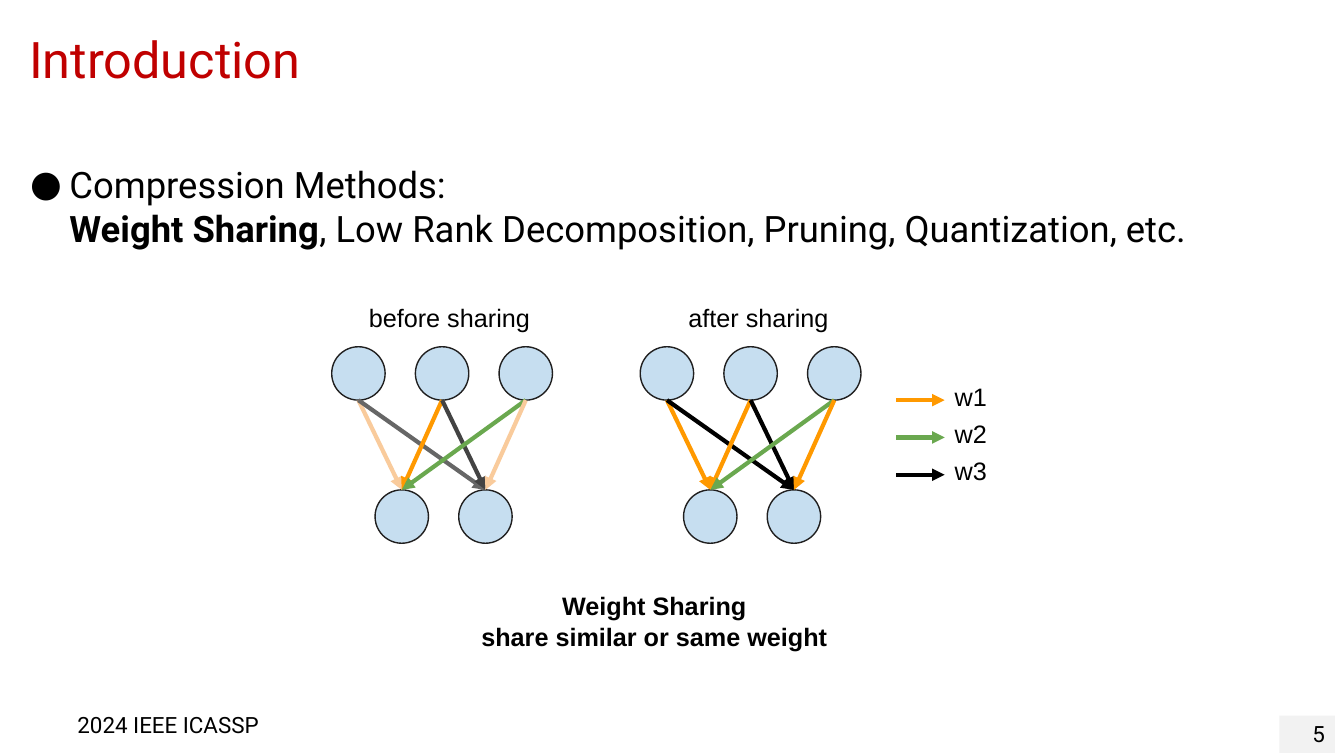
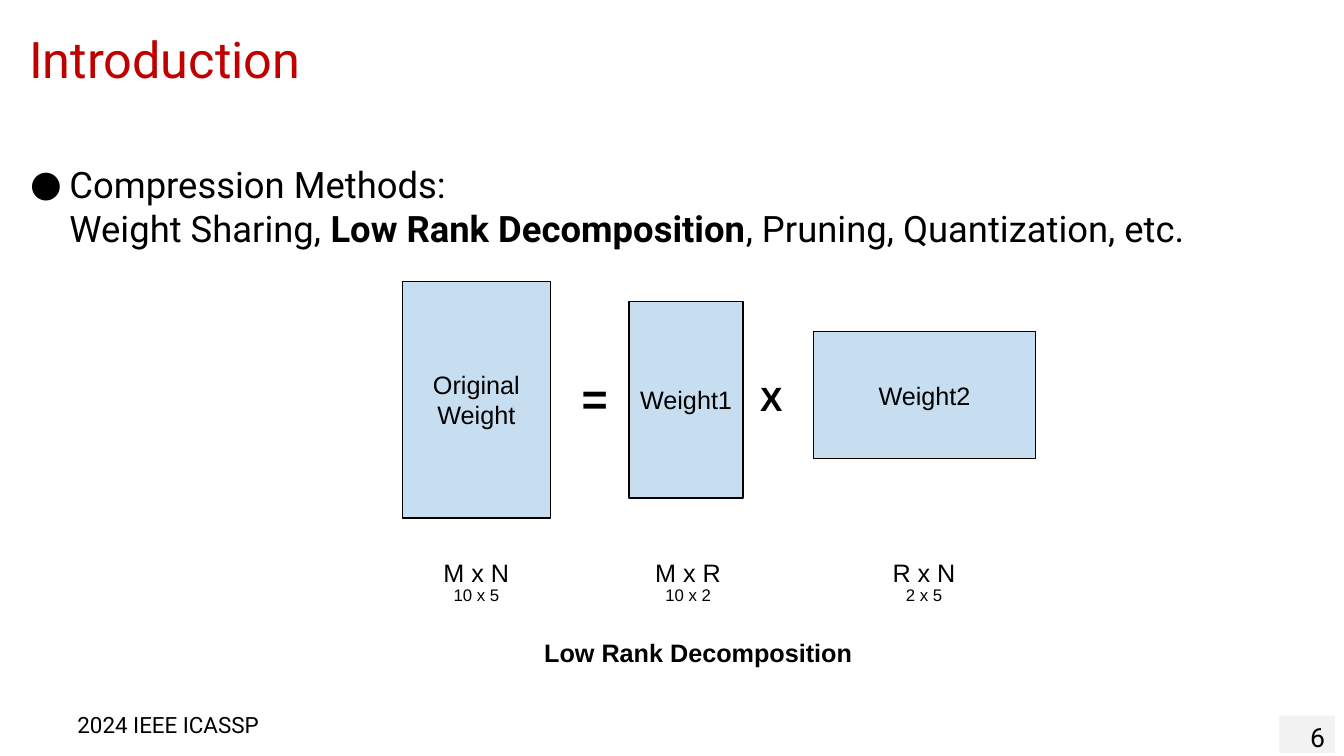
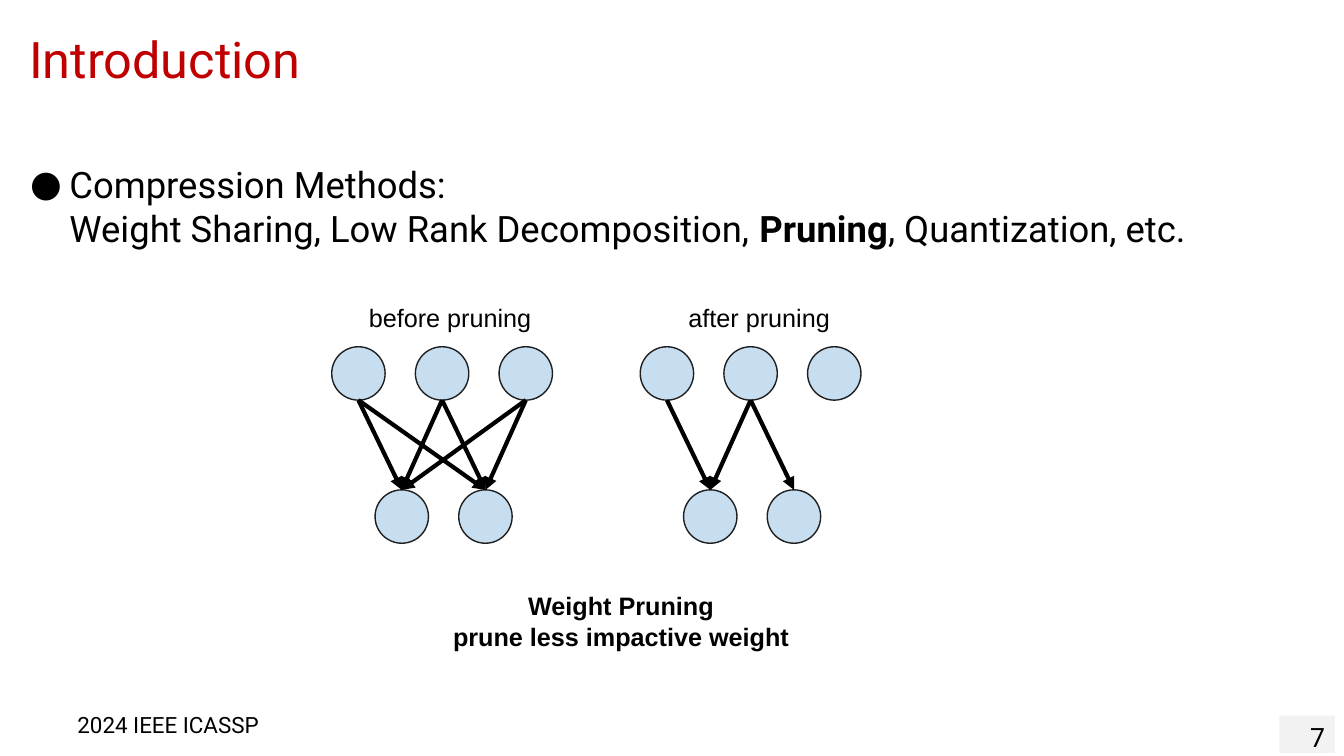
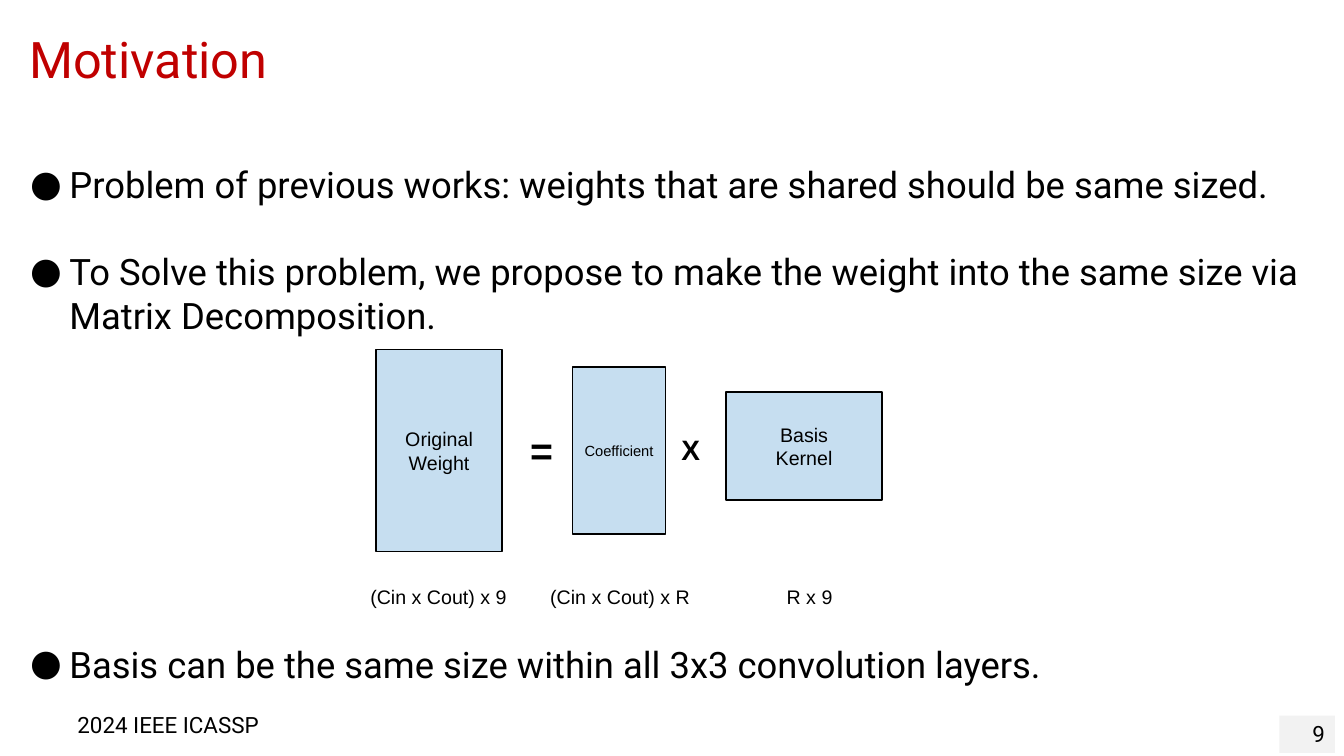
import dataclasses
import typing

import lxml.etree
import pptx
import pptx.dml.color
import pptx.enum.shapes
import pptx.enum.text
import pptx.oxml.ns
import pptx.util

Inches = pptx.util.Inches
Pt = pptx.util.Pt
Align = pptx.enum.text.PP_ALIGN
Anchor = pptx.enum.text.MSO_ANCHOR
Kind = pptx.enum.shapes.MSO_SHAPE


@dataclasses.dataclass(frozen=True)
class Theme:
    black: str = "000000"
    white: str = "FFFFFF"
    red: str = "C00000"
    blue: str = "C6DEF0"
    rim: str = "201F1F"
    band: str = "F2F2F2"
    orange: str = "FF9900"
    peach: str = "F9CB9C"
    green: str = "6AA84F"
    gray: str = "666666"
    dark: str = "434343"
    head: str = "Roboto"
    plain: str = "Arial"
    title: float = 36
    body: float = 26
    label: float = 18
    foot: float = 16
    page: float = 19
    small: float = 14
    tiny: float = 12


THEME = Theme()


@dataclasses.dataclass(frozen=True)
class Label:
    text: str
    left: float
    top: float
    width: float
    height: float = 0.4
    size: float = THEME.label
    bold: bool = False
    align: typing.Any = Align.CENTER
    font: str = THEME.plain


@dataclasses.dataclass(frozen=True)
class Edge:
    start: int
    end: int
    color: str = THEME.black


@dataclasses.dataclass(frozen=True)
class Bullet:
    lines: tuple[str, ...]
    strong: str = ""
    gap: float = 0


def tint(code: str) -> pptx.dml.color.RGBColor:
    return pptx.dml.color.RGBColor.from_string(code)


def assign(target: typing.Any, values: dict[str, typing.Any]) -> None:
    for name, value in values.items():
        setattr(target, name, value)


def style(run: typing.Any, size: float, font: str, bold: bool = False,
          color: str = THEME.black) -> None:
    assign(run.font, {"size": Pt(size), "name": font, "bold": bold})
    run.font.color.rgb = tint(color)


def write(shape: typing.Any, label: Label, anchor: typing.Any = Anchor.TOP) -> None:
    frame = shape.text_frame
    assign(frame, {"text": label.text, "word_wrap": True, "vertical_anchor": anchor})
    for line in frame.paragraphs:
        line.alignment = label.align
        for run in line.runs:
            style(run, label.size, label.font, label.bold)


def add_label(slide: typing.Any, label: Label) -> None:
    box = slide.shapes.add_textbox(Inches(label.left), Inches(label.top),
                                   Inches(label.width), Inches(label.height))
    write(box, label)


def add_form(slide: typing.Any, kind: typing.Any, left: float, top: float, width: float,
             height: float, fill: str, rim: str = "") -> typing.Any:
    form = slide.shapes.add_shape(kind, Inches(left), Inches(top),
                                  Inches(width), Inches(height))
    form.shadow.inherit = False
    form.fill.solid()
    form.fill.fore_color.rgb = tint(fill)
    if rim:
        form.line.color.rgb = tint(rim)
        form.line.width = Pt(1)
    else:
        form.line.fill.background()
    return form


def add_block(slide: typing.Any, label: Label) -> None:
    form = add_form(slide, Kind.RECTANGLE, label.left, label.top, label.width,
                    label.height, THEME.blue, THEME.black)
    write(form, label, Anchor.MIDDLE)


def add_arrow(slide: typing.Any, left: float, top: float, right: float, low: float,
              color: str, goal: typing.Any = None) -> None:
    arrow = slide.shapes.add_connector(
        pptx.enum.shapes.MSO_CONNECTOR.STRAIGHT,
        Inches(left), Inches(top), Inches(right), Inches(low))
    if goal is not None:
        arrow.end_connect(goal, 0)
    arrow.line.color.rgb = tint(color)
    arrow.line.width = Pt(3)
    tail = lxml.etree.SubElement(arrow.line._get_or_add_ln(),
                                 pptx.oxml.ns.qn("a:tailEnd"))
    tail.set("type", "triangle")
    lxml.etree.SubElement(arrow._element.spPr, pptx.oxml.ns.qn("a:effectLst"))


def add_net(slide: typing.Any, left: float, name: str, edges: tuple[Edge, ...]) -> None:
    size, step, top, low = 0.53, 0.83, 3.44, 4.86

    def add_row(start: float, height: float, count: int) -> list[typing.Any]:
        return [add_form(slide, Kind.OVAL, start + step * i, height, size, size,
                         THEME.blue, THEME.rim) for i in range(count)]

    add_row(left, top, 3)
    goals = add_row(left + 0.43, low, 2)
    for edge in edges:
        add_arrow(slide, left + size / 2 + step * edge.start, top + size,
                  left + 0.43 + size / 2 + step * edge.end, low,
                  edge.color, goals[edge.end])
    add_label(slide, Label(name, left + 0.27 if left < 5 else left + 0.38, 2.95, 2.1,
                           align=Align.LEFT))


def add_points(slide: typing.Any, points: tuple[Bullet, ...]) -> None:
    frame = slide.shapes.add_textbox(0, Inches(1.56), Inches(13.33),
                                     Inches(5.94)).text_frame
    frame.word_wrap = True
    for i, point in enumerate(points):
        para = frame.paragraphs[0] if i == 0 else frame.add_paragraph()
        props = para._p.get_or_add_pPr()
        props.set("marL", str(Inches(0.59)))
        props.set("indent", str(Inches(-0.39)))
        color = lxml.etree.SubElement(props, pptx.oxml.ns.qn("a:buClr"))
        lxml.etree.SubElement(color, pptx.oxml.ns.qn("a:srgbClr")).set("val", THEME.black)
        for tag, key, value in (("a:buFont", "typeface", THEME.head),
                                ("a:buChar", "char", "●")):
            lxml.etree.SubElement(props, pptx.oxml.ns.qn(tag)).set(key, value)
        if point.gap:
            para.space_before = Pt(point.gap)
        for j, line in enumerate(point.lines):
            if j:
                para.add_line_break()
            parts = line.partition(point.strong) if point.strong else (line,)
            for part in filter(None, parts):
                run = para.add_run()
                run.text = part
                style(run, THEME.body, THEME.head, part == point.strong)


def add_page(deck: typing.Any, title: str, page: str, size: float,
             points: tuple[Bullet, ...]) -> typing.Any:
    slide = deck.slides.add_slide(deck.slide_layouts[5])
    head = slide.shapes.title
    assign(head, {"left": 0, "top": Inches(0.34),
                  "width": Inches(10.51), "height": Inches(0.56)})
    head.line.color.rgb = tint(THEME.white)
    head.line.width = Pt(0.75)
    assign(head.text_frame, {"text": title, "word_wrap": True,
                             "vertical_anchor": Anchor.MIDDLE,
                             "auto_size": pptx.enum.text.MSO_AUTO_SIZE.NONE})
    para = head.text_frame.paragraphs[0]
    assign(para, {"alignment": Align.LEFT, "line_spacing": 0.9})
    para._p.get_or_add_pPr().set("marL", str(Inches(0.19)))
    style(para.runs[0], THEME.title, THEME.head, color=THEME.red)
    add_points(slide, points)
    add_label(slide, Label("2024 IEEE ICASSP", 0.67, 7.01, 2.44, 0.37, THEME.foot,
                           align=Align.LEFT, font=THEME.head))
    mark = Label(page, 12.69, 7.1, 0.55, 0.37, size, align=Align.RIGHT, font=THEME.head)
    band = add_form(slide, Kind.RECTANGLE, mark.left, mark.top, mark.width,
                    mark.height, THEME.band)
    write(band, mark)
    return slide


def add_intro(deck: typing.Any, page: str, size: float, strong: str) -> typing.Any:
    point = Bullet(("Compression Methods:",
                    "Weight Sharing, Low Rank Decomposition, Pruning, Quantization, etc."),
                   strong)
    return add_page(deck, "Introduction", page, size, (point,))


def make_edges(*colors: str) -> tuple[Edge, ...]:
    return tuple(Edge(i // 2, i % 2, color) for i, color in enumerate(colors))


def add_sharing(deck: typing.Any) -> None:
    t = THEME
    slide = add_intro(deck, "5", t.foot, "Weight Sharing")
    add_net(slide, 3.29, "before sharing",
            make_edges(t.peach, t.gray, t.orange, t.dark, t.green, t.peach))
    add_net(slide, 6.35, "after sharing",
            make_edges(t.orange, t.black, t.orange, t.black, t.green, t.orange))
    for i, color in enumerate((t.orange, t.green, t.black)):
        top = 3.97 + 0.37 * i
        add_arrow(slide, 8.89, top, 9.37, top, color)
        add_label(slide, Label(f"w{i + 1}", 9.37, top - 0.24, 0.66, align=Align.LEFT))
    add_label(slide, Label("Weight Sharing\nshare similar or same weight",
                           3.62, 5.81, 5.74, 0.71, bold=True))


def add_rank(deck: typing.Any) -> None:
    slide = add_intro(deck, "6", THEME.page, "Low Rank Decomposition")
    for block in (Label("Original Weight", 3.99, 2.79, 1.47, 2.35),
                  Label("Weight1", 6.24, 2.99, 1.13, 1.95),
                  Label("Weight2", 8.07, 3.29, 2.2, 1.26)):
        add_block(slide, block)
    for mid, name, size in ((4.73, "M x N", "10 x 5"), (6.83, "M x R", "10 x 2"),
                            (9.17, "R x N", "2 x 5")):
        add_label(slide, Label(name, mid - 0.57, 5.48, 1.13))
        add_label(slide, Label(size, mid - 0.41, 5.75, 0.81, 0.3, THEME.tiny))
    for label in (Label("=", 5.67, 3.63, 0.51, 0.64, 32, True, Align.LEFT),
                  Label("X", 7.44, 3.7, 0.46, 0.5, 24, True, Align.LEFT),
                  Label("Low Rank Decomposition", 4.67, 6.27, 4.51, bold=True)):
        add_label(slide, label)


def add_pruning(deck: typing.Any) -> None:
    slide = add_intro(deck, "7", THEME.page, "Pruning")
    add_net(slide, 3.29, "before pruning", make_edges(*[THEME.black] * 6))
    add_net(slide, 6.35, "after pruning", (Edge(0, 0), Edge(1, 0), Edge(1, 1)))
    add_label(slide, Label("Weight Pruning\nprune less impactive weight",
                           3.29, 5.81, 5.74, 0.71, bold=True))


def add_motive(deck: typing.Any) -> None:
    points = (
        Bullet(("Problem of previous works: weights that are shared should be same sized.",)),
        Bullet(("To Solve this problem, we propose to make the weight into the same size "
                "via Matrix Decomposition.",), gap=31),
        Bullet(("Basis can be the same size within all 3x3 convolution layers.",), gap=218),
    )
    slide = add_page(deck, "Motivation", "9", THEME.foot, points)
    small = THEME.small
    for block in (Label("Original Weight", 3.73, 3.47, 1.25, 2, small),
                  Label("Coefficient", 5.68, 3.64, 0.92, 1.66, 10.5),
                  Label("Basis\nKernel", 7.2, 3.89, 1.55, 1.07, small)):
        add_block(slide, block)
    for label in (Label("(Cin x Cout) x 9", 3.55, 5.75, 1.6, 0.34, small),
                  Label("(Cin x Cout) x R", 5.33, 5.75, 1.64, 0.34, small),
                  Label("R x 9", 7.7, 5.75, 0.66, 0.34, small),
                  Label("=", 5.16, 4.18, 0.43, 0.57, 28, True, Align.LEFT),
                  Label("X", 6.66, 4.24, 0.39, 0.44, 20, True, Align.LEFT)):
        add_label(slide, label)


def main() -> None:
    deck = pptx.Presentation()
    assign(deck, {"slide_width": Inches(13.33), "slide_height": Inches(7.5)})
    for build in (add_sharing, add_rank, add_pruning, add_motive):
        build(deck)
    deck.save("out.pptx")


if __name__ == "__main__":
    main()
